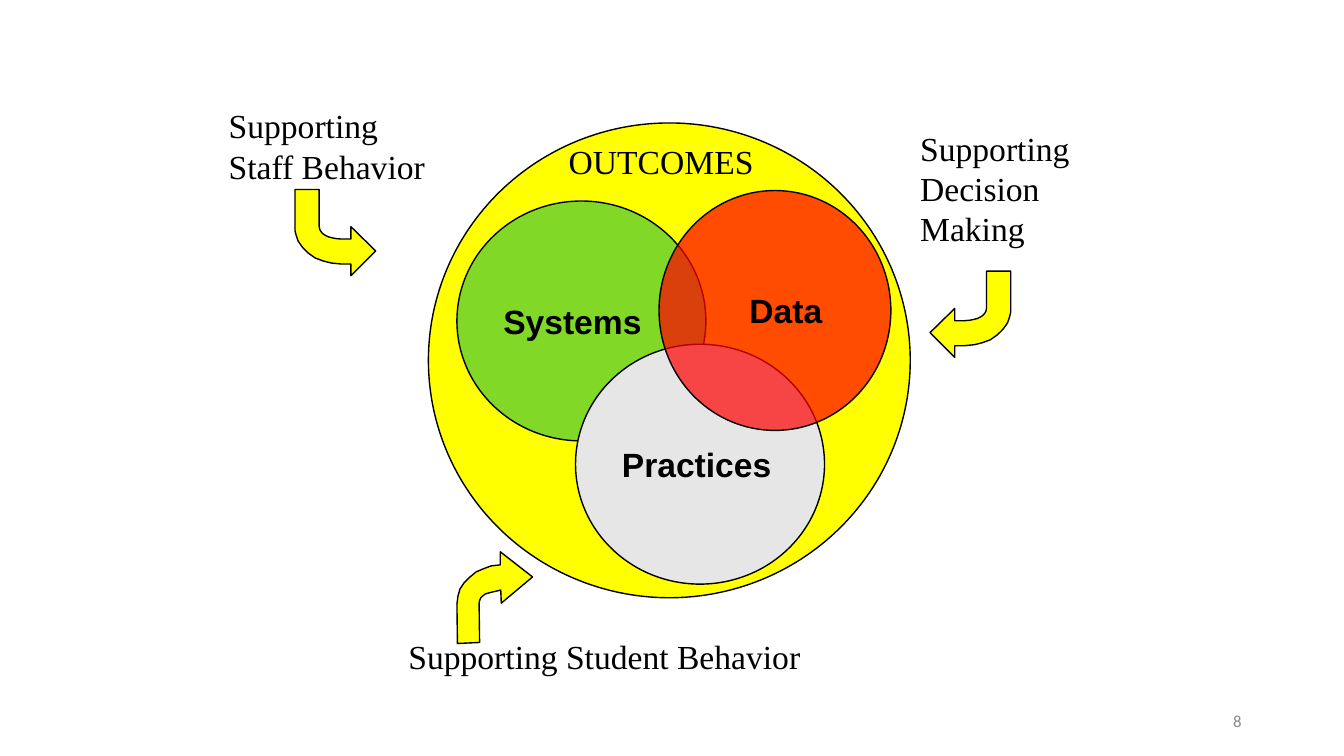
from lxml.etree import SubElement
from pptx import Presentation
from pptx.dml.color import RGBColor
from pptx.enum.shapes import MSO_SHAPE
from pptx.enum.text import MSO_ANCHOR as Anchor, PP_ALIGN as Align
from pptx.oxml.ns import qn
from pptx.util import Emu, Inches, Pt

# Places are columns and rows of a grid with cells of a tenth of an inch
CELL = Inches(0.1)
COLUMNS, ROWS = 133.33, 75
COLORS = {"yellow": "FFFF00", "green": "00B050", "gray": "E7E6E6",
          "red": "FF0000", "black": "000000", "page number": "888888"}

# Circles: label, left, top, width, height, colour, opacity %, label indent
CIRCLES = [
    ("", 42.5, 12.2, 47.8, 47.1, "yellow", 100, 0),
    ("Systems", 45.33, 19.94, 24.7, 23.8, "green", 49, 0),
    ("Practices", 57.1, 34.15, 24.7, 23.8, "gray", 100, 0),
    ("Data", 65.38, 18.9, 23, 23.8, "red", 70, 4.6),
]

# Captions: paragraphs, left, top, width, height
CAPTIONS = [
    (["Supporting", "Staff Behavior"], 21.7, 9.96, 25.8, 10.3),
    (["Supporting Student Behavior"], 39.53, 62.6, 43.3, 5.6),
    (["OUTCOMES"], 55.43, 13.5, 22.5, 4.5),
    (["Supporting", "Decision Making"], 90.3, 12.16, 20.8, 14.7),
]
PAGE_NUMBER = ("8", 94.17, 69.5, 30, 4)

# Arrow outlines, measured from the arrow's own left and top
TURN_DOWN = [
    (8, 6.1), (5.55, 8.55), (5.55, 7.4), (4.6, 7.4), (3.6, 7.3), (2.8, 7.1),
    (2, 6.8), (1.3, 6.3), (1, 6), (0.75, 5.75), (0.5, 5.4), (0.3, 5.1),
    (0.2, 4.8), (0.1, 4.5), (0, 4.1), (0, 3.7), (0, 0), (2.4, 0),
    (2.4, 3.7), (2.45, 3.95), (2.57, 4.17), (2.75, 4.38), (3, 4.55),
    (3.3, 4.7), (3.7, 4.8), (4.1, 4.88), (4.6, 4.92), (5.55, 4.92),
    (5.55, 3.7),
]
TURN_UP = [
    (7.5, 2.5), (4.3, 0), (4.3, 1.3), (3.4, 1.4), (2.6, 1.7), (1.9, 2),
    (1.3, 2.5), (0.7, 3.1), (0.3, 3.7), (0.1, 4.4), (0, 5.2), (0.05, 9.1),
    (2.25, 9), (2.2, 5.1), (2.25, 4.85), (2.35, 4.6), (2.55, 4.4),
    (2.8, 4.2), (3.1, 4.1), (3.5, 4), (4.35, 3.8), (4.4, 5.1),
]
# Arrows: outline, x of the tail's outer edge, top, direction across
ARROWS = [
    (TURN_DOWN, 29.27, 18.8, 1),
    (TURN_UP, 45.33, 54.74, 1),
    (TURN_DOWN, 100.27, 26.9, -1),
]


def cells(*counts):
    return [Emu(round(count * CELL)) for count in counts]


def color(name):
    return RGBColor.from_string(COLORS[name])


def paint(shape, name, opacity=100):
    shape.shadow.inherit = False
    shape.fill.solid()
    shape.fill.fore_color.rgb = color(name)
    if opacity < 100:
        tint = shape.fill._xPr.find(qn("a:solidFill"))[0]
        SubElement(tint, qn("a:alpha"), val=str(opacity * 1000))
    shape.line.color.rgb = color("black")
    shape.line.width = Pt(1)


def write(shape, lines, font, size, ink="black", bold=False,
          align=Align.LEFT, anchor=Anchor.TOP):
    frame = shape.text_frame
    frame.word_wrap = True
    frame.vertical_anchor = anchor
    for index, line in enumerate(lines):
        para = frame.add_paragraph() if index else frame.paragraphs[0]
        para.alignment = align
        span = para.add_run()
        span.text = line
        span.font.name = font
        span.font.size = Pt(size)
        span.font.bold = bold
        span.font.color.rgb = color(ink)


deck = Presentation()
deck.slide_width, deck.slide_height = cells(COLUMNS, ROWS)
page = deck.slides.add_slide(deck.slide_layouts[6])

# Overlapping circles
for label, left, top, width, height, fill, opacity, indent in CIRCLES:
    circle = page.shapes.add_shape(MSO_SHAPE.OVAL, *cells(left, top, width, height))
    paint(circle, fill, opacity)
    if label:
        circle.text_frame.margin_left += cells(indent)[0]
        write(circle, [label], "Arial", 24, bold=True, anchor=Anchor.MIDDLE)

# Bent arrows
for outline, edge, top, direction in ARROWS:
    points = [cells(edge + direction * x, top + y) for x, y in outline]
    builder = page.shapes.build_freeform(*points[0])
    builder.add_line_segments(points[1:], close=True)
    paint(builder.convert_to_shape(), "yellow")

# Captions
for lines, *place in CAPTIONS:
    write(page.shapes.add_textbox(*cells(*place)), lines, "Times New Roman", 24)

# Page number
number, *place = PAGE_NUMBER
write(page.shapes.add_textbox(*cells(*place)), [number], "Calibri", 12,
      ink="page number", align=Align.RIGHT, anchor=Anchor.MIDDLE)

deck.save("out.pptx")
